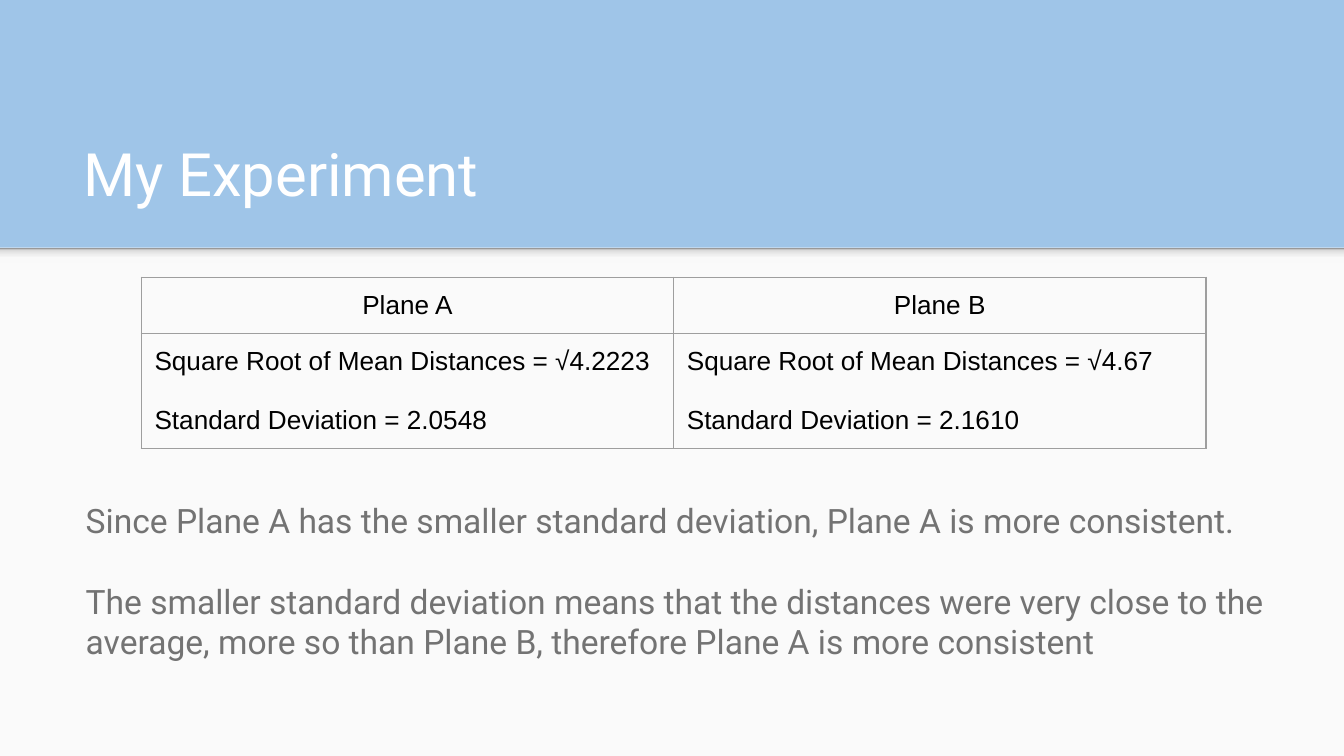
"""Builds the "My Experiment" slide comparing Plane A and Plane B."""
from copy import deepcopy

from lxml import etree
from pptx import Presentation
from pptx.dml.color import RGBColor
from pptx.enum.shapes import MSO_SHAPE
from pptx.enum.text import MSO_ANCHOR, MSO_AUTO_SIZE, PP_ALIGN
from pptx.oxml import parse_xml
from pptx.oxml.ns import nsdecls, qn
from pptx.util import Cm, Pt

RECTANGLE = MSO_SHAPE.RECTANGLE
TOP, BOTTOM = MSO_ANCHOR.TOP, MSO_ANCHOR.BOTTOM
LEFT, CENTER = PP_ALIGN.LEFT, PP_ALIGN.CENTER
NO_AUTOFIT = MSO_AUTO_SIZE.NONE
INSET = Cm(0.25)


def color(hex_string):
    return RGBColor.from_string(hex_string)


def style(paragraph, size, font_name, hex_string, align=LEFT):
    paragraph.alignment = align
    paragraph.font.size = Pt(size)
    paragraph.font.name = font_name
    paragraph.font.color.rgb = color(hex_string)


prs = Presentation()
prs.slide_width, prs.slide_height = Cm(25.4), Cm(14.29)
slide = prs.slides.add_slide(prs.slide_layouts[1])
slide.background.fill.solid()
slide.background.fill.fore_color.rgb = color("9FC5E8")

panel = slide.shapes.add_shape(RECTANGLE, 0, Cm(4.68), Cm(25.4), Cm(9.61))
panel.fill.solid()
panel.fill.fore_color.rgb = color("FAFAFA")

header_shadow = slide.shapes.add_shape(RECTANGLE, 0, Cm(4.68), Cm(25.4), Cm(0.3))
header_shadow.fill.gradient()
header_shadow.fill.gradient_angle = 90
stop_list = header_shadow._element.spPr.find(qn("a:gradFill")).find(qn("a:gsLst"))
for stop in list(stop_list):
    stop_list.append(deepcopy(stop))
shades = [(0, "F9F9F9"), (0.36, "F9F9F9"), (0.8, "DEDEDE"), (1, "999999")]
for stop, (position, shade) in zip(header_shadow.fill.gradient_stops, shades):
    stop.position = position
    stop.color.rgb = color(shade)

for depth, backdrop in enumerate([panel, header_shadow], start=2):
    backdrop.shadow.inherit = False
    backdrop.line.fill.background()
    slide.shapes._spTree.insert(depth, backdrop._element)

title, conclusion = slide.placeholders
title.left, title.top, title.width, title.height = Cm(1.32), Cm(2.06), Cm(22.83), Cm(2.13)
conclusion.left, conclusion.top = Cm(1.37), Cm(9.19)
conclusion.width, conclusion.height = Cm(22.78), Cm(3.91)
title.text_frame.text = "My Experiment"
conclusion.text_frame.text = (
    "Since Plane A has the smaller standard deviation, Plane A is more consistent.\n"
    "The smaller standard deviation means that the distances were very close to the "
    "average, more so than Plane B, therefore Plane A is more consistent"
)
for frame, anchor in [(title.text_frame, BOTTOM), (conclusion.text_frame, TOP)]:
    frame.word_wrap = True
    frame.auto_size = NO_AUTOFIT
    frame.vertical_anchor = anchor
    frame.margin_left = frame.margin_right = INSET
    frame.margin_top = frame.margin_bottom = INSET

style(title.text_frame.paragraphs[0], 32, "Roboto", "FFFFFF")
for index, paragraph in enumerate(conclusion.text_frame.paragraphs):
    paragraph.space_before = Pt(22 * index)
    properties = paragraph._p.get_or_add_pPr()
    properties.set("marL", "0")
    properties.set("indent", "0")
    etree.SubElement(properties, qn("a:buNone"))
    style(paragraph, 18, "Roboto", "737373")

results = [
    ["Plane A", "Plane B"],
    [
        "Square Root of Mean Distances = √4.2223\nStandard Deviation = 2.0548",
        "Square Root of Mean Distances = √4.67\nStandard Deviation = 2.1610",
    ],
]
table = slide.shapes.add_table(2, 2, Cm(2.67), Cm(5.24), Cm(20.12), Cm(3.24)).table
table.first_row = table.horz_banding = False
table.rows[0].height, table.rows[1].height = Cm(1.06), Cm(2.18)

for row, row_texts in enumerate(results):
    for column, text in enumerate(row_texts):
        cell = table.cell(row, column)
        cell.text = text
        cell.fill.background()
        cell.margin_left = cell.margin_right = INSET
        cell.margin_top = cell.margin_bottom = INSET
        for index, paragraph in enumerate(cell.text_frame.paragraphs):
            paragraph.space_before = Pt(16 * index)
            style(paragraph, 14, "Arial", "000000", LEFT if row else CENTER)
        for order, side in enumerate(["lnL", "lnR", "lnT", "lnB"]):
            border = parse_xml(
                f'<a:{side} {nsdecls("a")} w="{Pt(0.75)}"><a:solidFill>'
                f'<a:srgbClr val="9E9E9E"/></a:solidFill></a:{side}>'
            )
            cell._tc.get_or_add_tcPr().insert(order, border)

prs.save("out.pptx")
